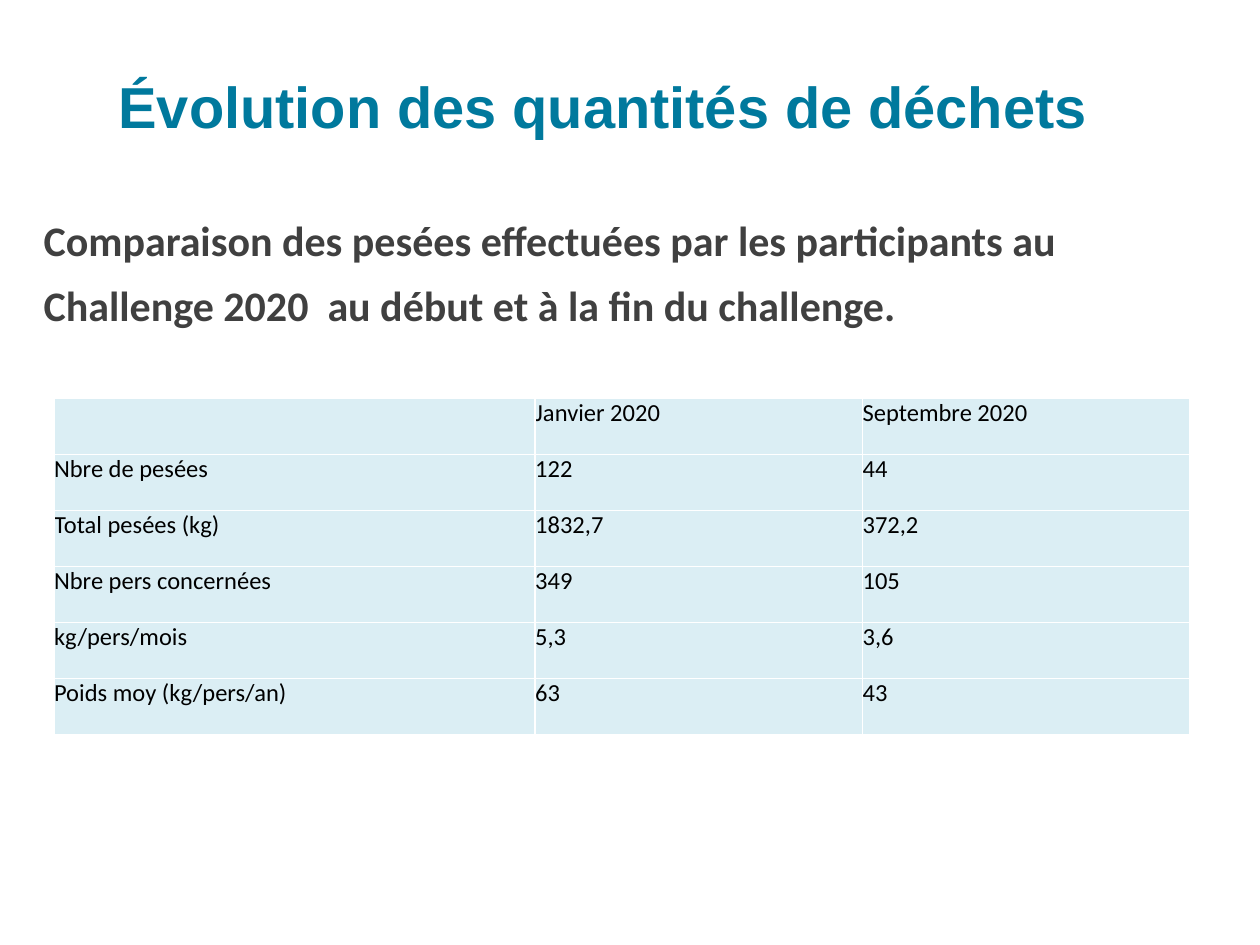
"""Build the slide comparing waste quantities at the start and end of the challenge."""
from lxml import etree
from pptx import Presentation
from pptx import util as u
from pptx.dml.color import RGBColor
from pptx.enum import text
from pptx.oxml import ns

TITLE = "Évolution des quantités de déchets"
SUBTITLE = ("Comparaison des pesées effectuées par les participants au "
            "Challenge 2020  au début et à la fin du challenge.")
ROWS = [
    ("", "Janvier 2020", "Septembre 2020"),
    ("Nbre de pesées", "122", "44"),
    ("Total pesées (kg)", "1832,7", "372,2"),
    ("Nbre pers concernées", "349", "105"),
    ("kg/pers/mois", "5,3", "3,6"),
    ("Poids moy (kg/pers/an)", "63", "43"),
]
COLUMN_WIDTHS = (9.7, 6.6, 6.6)
ROW_HEIGHT = 1.13

BLUE = RGBColor(0x00, 0x79, 0x9D)
GREY = RGBColor(0x40, 0x40, 0x40)
BLACK = RGBColor(0x00, 0x00, 0x00)
WHITE = RGBColor(0xFF, 0xFF, 0xFF)
PALE_BLUE = RGBColor(0xDB, 0xEE, 0xF4)


def set_margins(target, margin):
    target.margin_left = target.margin_right = margin
    target.margin_top = target.margin_bottom = margin


def set_font(font, name, size, color, bold=False):
    font.name, font.size, font.bold = name, u.Pt(size), bold
    font.color.rgb = color


def add_text(slide, content, box, anchor, name, size, color, spacing=None):
    shape = slide.shapes.add_textbox(*map(u.Cm, box))
    frame = shape.text_frame
    frame.word_wrap = True
    frame.vertical_anchor = anchor
    set_margins(frame, u.Cm(0.18))
    frame.text = content
    paragraph = frame.paragraphs[0]
    paragraph.line_spacing = spacing
    set_font(paragraph.runs[0].font, name, size, color, bold=True)


def add_borders(cell):
    properties = cell._tc.get_or_add_tcPr()
    for index, side in enumerate(("lnL", "lnR", "lnT", "lnB")):
        line = etree.Element(ns.qn(f"a:{side}"), w=str(u.Pt(1)))
        fill = etree.SubElement(line, ns.qn("a:solidFill"))
        etree.SubElement(fill, ns.qn("a:srgbClr"), val=str(WHITE))
        properties.insert(index, line)


def add_weighing_table(slide, left, top):
    table = slide.shapes.add_table(
        len(ROWS), len(COLUMN_WIDTHS), u.Cm(left), u.Cm(top),
        u.Cm(sum(COLUMN_WIDTHS)), u.Cm(ROW_HEIGHT * len(ROWS))).table
    for column, width in zip(table.columns, COLUMN_WIDTHS):
        column.width = u.Cm(width)
    for row, values in zip(table.rows, ROWS):
        row.height = u.Cm(ROW_HEIGHT)
        for cell, value in zip(row.cells, values):
            set_margins(cell, 0)
            cell.fill.solid()
            cell.fill.fore_color.rgb = PALE_BLUE
            add_borders(cell)
            cell.text = value
            for run in cell.text_frame.paragraphs[0].runs:
                set_font(run.font, "Calibri", 14, BLACK)


def main():
    presentation = Presentation()
    presentation.slide_width, presentation.slide_height = u.Cm(25.4), u.Cm(19.05)
    slide = presentation.slides.add_slide(presentation.slide_layouts[6])
    add_text(slide, TITLE, (2.21, 1.19, 22.86, 1.88),
             text.MSO_ANCHOR.MIDDLE, "Arial", 33, BLUE)
    add_text(slide, SUBTITLE, (0.7, 3.84, 23.77, 15.21),
             text.MSO_ANCHOR.TOP, "Calibri", 24, GREY, spacing=1.3)
    add_weighing_table(slide, 1.09, 8.03)
    presentation.save("out.pptx")


if __name__ == "__main__":
    main()
